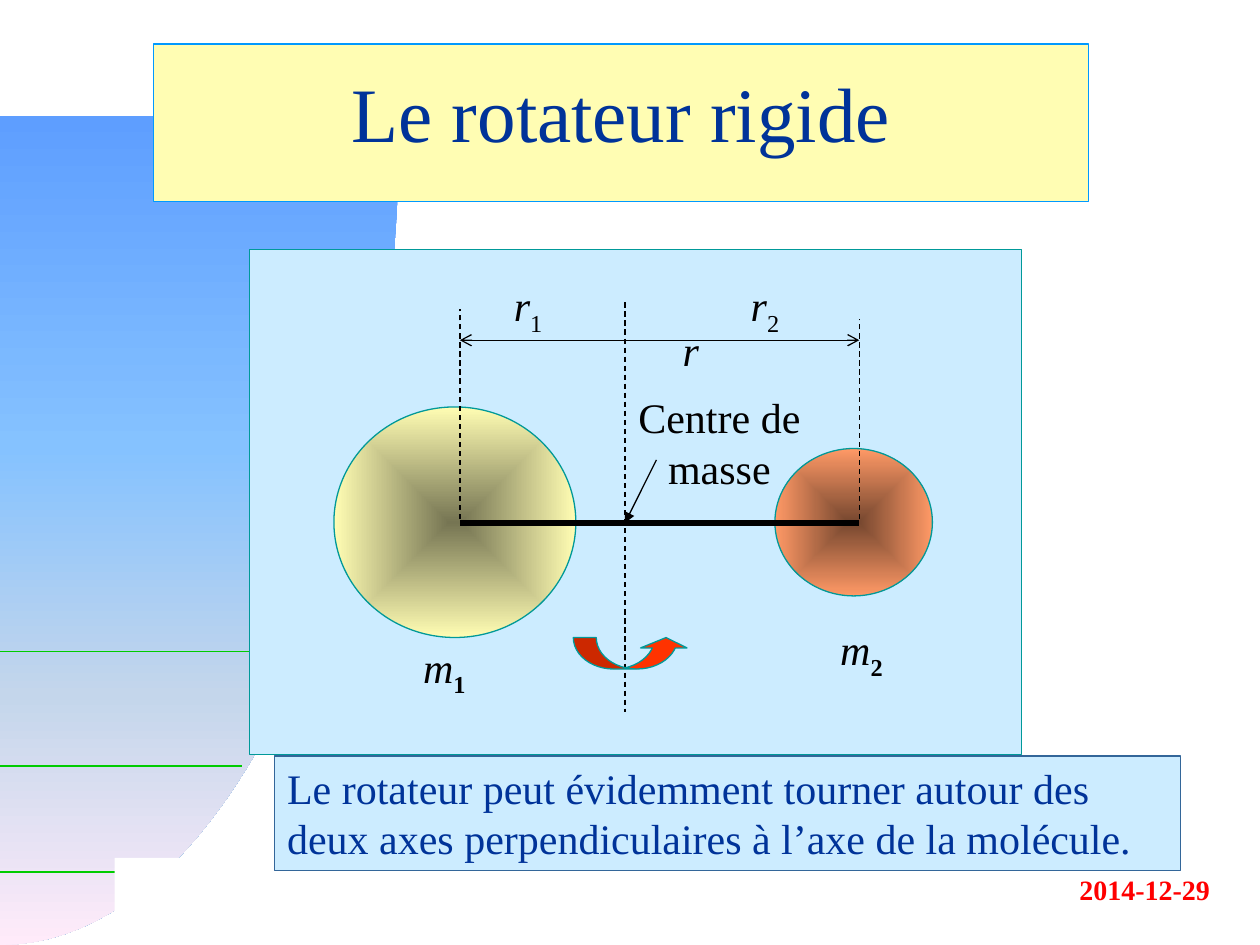
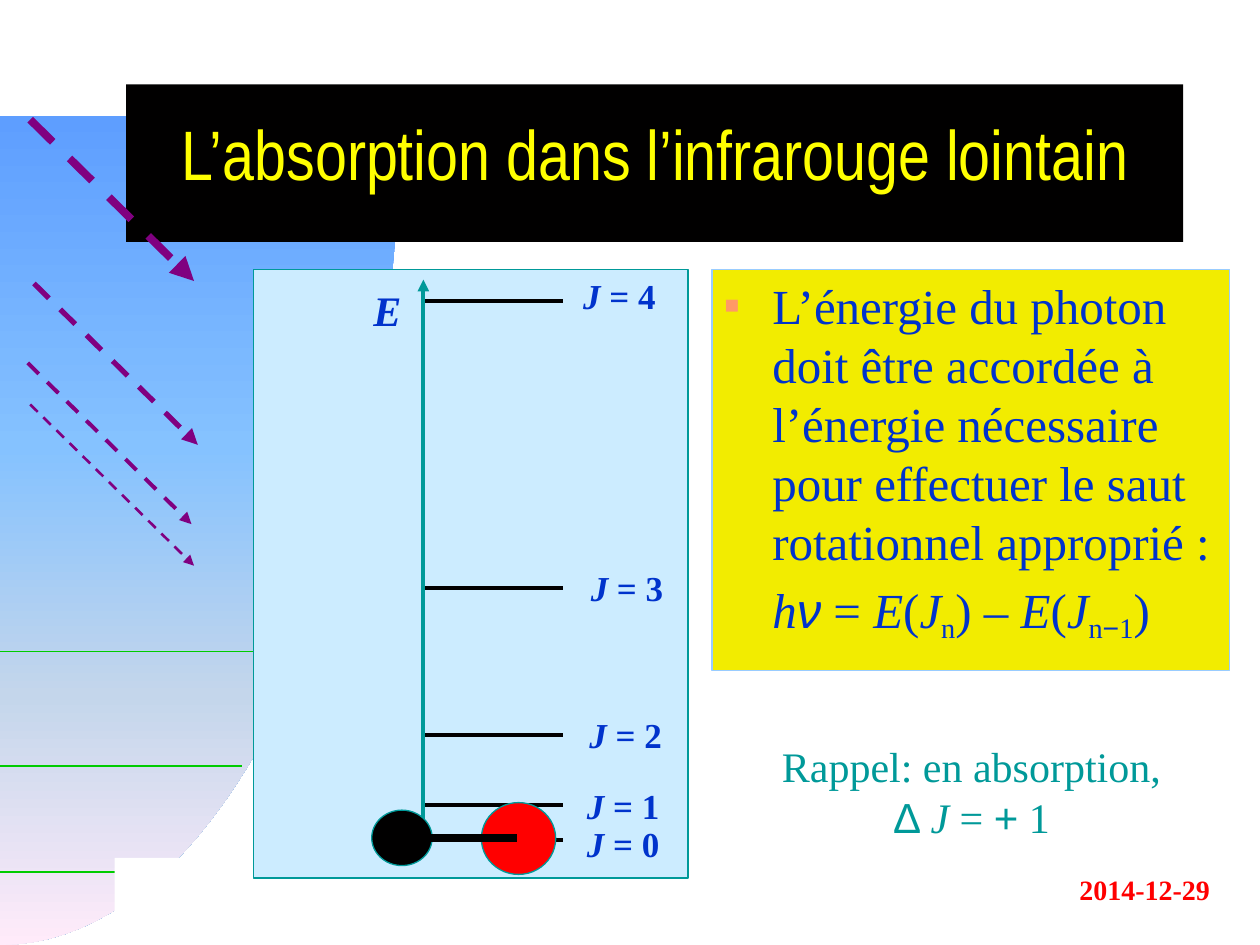
from dataclasses import dataclass
from typing import Optional

from lxml.etree import SubElement
from pptx import Presentation
from pptx.dml.color import RGBColor
from pptx.enum.dml import MSO_LINE
from pptx.enum.shapes import MSO_CONNECTOR, MSO_SHAPE
from pptx.enum.text import MSO_ANCHOR, MSO_AUTO_SIZE, PP_ALIGN
from pptx.oxml.ns import qn
from pptx.util import Inches, Pt

SERIF, SANS, NARROW = "Times New Roman", "Arial", "Arial Narrow"
BLACK, WHITE, RED, GREEN = "010000", "FFFFFF", "FF0000", "00CC00"
TEAL, PALE_BLUE, NAVY, BLUE = "009999", "CCECFF", "003399", "0033CC"
PURPLE, CREAM, YELLOW = "800080", "FFFDB3", "FFFF00"
SKY = [(0, "5E9EFF"), (40, "85C2FF"), (70, "C4D6EB"), (100, "FFEBFA")]
CURVE = [(0, 7.5), (1.75, 7.5), (3.17, 4.56), (3.17, 0.92)]
RULES = [(5.17, 2.42), (6.08, 1.92), (6.92, 1.33)]


@dataclass
class Run:
    """A stretch of text with one format."""
    text: str
    italic: bool = False
    bold: bool = False
    base: int = 0
    font: str = SERIF


@dataclass
class Line:
    """A straight line with optional dash and arrowheads."""
    x1: float
    y1: float
    x2: float
    y2: float
    color: str = BLACK
    width: float = 0.75
    dash: bool = False
    head: Optional[str] = None
    tail: Optional[str] = None


@dataclass
class Label:
    """A text box of one paragraph."""
    x: float
    y: float
    w: float
    h: float
    runs: list
    size: float = 24
    color: str = BLACK
    align: PP_ALIGN = PP_ALIGN.LEFT


@dataclass
class Level:
    """A rotational energy level and the place of its label."""
    j: int
    y: float
    label_x: float
    label_y: float


def rgb(color: str) -> RGBColor:
    """Turn a hex string into a colour."""
    return RGBColor.from_string(color)


def paint(sp, fill: Optional[str], line: Optional[str] = None) -> None:
    """Set the solid fill and thin outline of a shape."""
    if fill:
        sp.fill.solid()
        sp.fill.fore_color.rgb = rgb(fill)
    if line:
        sp.line.color.rgb = rgb(line)
        sp.line.width = Pt(0.75)
    else:
        sp.line.fill.background()


def gradient(sp, stops: list, radial: bool = False) -> None:
    """Fill a shape with a downward or a centred gradient."""
    sp.fill.gradient()
    grad = sp.element.spPr.find(qn("a:gradFill"))
    for child in list(grad):
        grad.remove(child)
    gs_list = SubElement(grad, qn("a:gsLst"))
    for pos, color in stops:
        gs = SubElement(gs_list, qn("a:gs"), pos=str(pos * 1000))
        SubElement(gs, qn("a:srgbClr"), val=color)
    if radial:
        center = SubElement(grad, qn("a:path"), path="shape")
        SubElement(center, qn("a:fillToRect"), {side: "50000" for side in "ltrb"})
    else:
        SubElement(grad, qn("a:lin"), ang="5400000", scaled="0")


def add_runs(p, runs: list, size: float, color: str) -> None:
    """Add formatted runs to a paragraph."""
    for run in runs:
        r = p.add_run()
        r.text = run.text
        r.font.name, r.font.size = run.font, Pt(size)
        r.font.italic, r.font.bold = run.italic, run.bold
        r.font.color.rgb = rgb(color)
        if run.base:
            r._r.get_or_add_rPr().set("baseline", str(run.base * 1000))


def add_label(slide, label: Label):
    """Draw a text box."""
    sp = slide.shapes.add_textbox(*map(Inches, (label.x, label.y, label.w, label.h)))
    sp.text_frame.word_wrap = True
    p = sp.text_frame.paragraphs[0]
    p.alignment = label.align
    add_runs(p, label.runs, label.size, label.color)
    return sp


def add_line(slide, line: Line) -> None:
    """Draw a line or an arrow."""
    ends = map(Inches, (line.x1, line.y1, line.x2, line.y2))
    cxn = slide.shapes.add_connector(MSO_CONNECTOR.STRAIGHT, *ends)
    cxn.line.color.rgb = rgb(line.color)
    cxn.line.width = Pt(line.width)
    if line.dash:
        cxn.line.dash_style = MSO_LINE.DASH
    ln = cxn.element.spPr.find(qn("a:ln"))
    for tag, kind in (("a:headEnd", line.head), ("a:tailEnd", line.tail)):
        if kind:
            SubElement(ln, qn(tag), type=kind)
    SubElement(cxn.element.spPr, qn("a:effectLst"))


def add_shape(slide, kind, box: tuple, fill: Optional[str], line: Optional[str] = None):
    """Draw a preset shape without shadow."""
    sp = slide.shapes.add_shape(kind, *map(Inches, box))
    sp.shadow.inherit = False
    paint(sp, fill, line)
    return sp


def place(sp, box: tuple) -> None:
    """Move and size a placeholder."""
    sp.left, sp.top, sp.width, sp.height = map(Inches, box)


def bezier(t: float) -> tuple:
    """Give the point of the backdrop curve at t."""
    weights = ((1 - t) ** 3, 3 * t * (1 - t) ** 2, 3 * t * t * (1 - t), t ** 3)
    return tuple(Inches(sum(w * pt[i] for w, pt in zip(weights, CURVE))) for i in (0, 1))


def add_backdrop(slide) -> None:
    """Draw the curved band, green rules, date and white patch."""
    points = [bezier(i / 40) for i in range(41)]
    builder = slide.shapes.build_freeform(*points[0])
    builder.add_line_segments(points[1:] + [(0, Inches(0.92))], close=True)
    band = builder.convert_to_shape()
    band.shadow.inherit = False
    paint(band, None)
    gradient(band, SKY)
    for y, end in RULES:
        add_line(slide, Line(0, y, end, y, GREEN))
    add_label(slide, Label(8.2, 6.88, 1.5, 0.37, [Run("2014-12-29", bold=True)],
                           16, RED, PP_ALIGN.RIGHT))
    add_shape(slide, MSO_SHAPE.RECTANGLE, (0.91, 6.81, 1.88, 0.47), WHITE)


def add_slide(prs, layout: int, title: Run, box: tuple, size: float, color: str,
              fill: str, line: Optional[str] = None):
    """Add a slide with the backdrop and a filled title."""
    slide = prs.slides.add_slide(prs.slide_layouts[layout])
    add_backdrop(slide)
    sp = slide.shapes.title
    slide.shapes.element.append(sp.element)
    place(sp, box)
    paint(sp, fill, line)
    tf = sp.text_frame
    tf.auto_size, tf.vertical_anchor = MSO_AUTO_SIZE.NONE, MSO_ANCHOR.MIDDLE
    p = tf.paragraphs[0]
    p.alignment, p.line_spacing = PP_ALIGN.CENTER, 0.7
    add_runs(p, [title], size, color)
    return slide


def symbol(letter: str, index: str = "", bold: bool = False) -> list:
    """Give the runs of an italic symbol with a subscript."""
    return [Run(letter, italic=True)] + ([Run(index, bold=bold, base=-25)] if index else [])


def build_rotor(prs) -> None:
    """Build the slide on the rigid rotor."""
    slide = add_slide(prs, 5, Run("Le rotateur rigide"), (1.22, 0.35, 7.42, 1.25),
                      44, NAVY, CREAM, "0099FF")
    x1, center, x2, axis_y = 3.65, 4.96, 6.82, 4.15
    add_shape(slide, MSO_SHAPE.RECTANGLE, (1.98, 1.98, 6.13, 4.01), PALE_BLUE, TEAL)
    add_line(slide, Line(center, 2.4, center, 5.65, dash=True))
    arrow = add_shape(slide, MSO_SHAPE.CURVED_UP_ARROW, (4.55, 5.06, 0.92, 0.25), "FF3300", TEAL)
    for i, value in enumerate((0.73, 1.47, 0.33)):
        arrow.adjustments[i] = value
    for box, dark, light in (((2.65, 3.23, 1.92, 1.83), "767553", CREAM),
                             ((6.15, 3.56, 1.25, 1.17), "76472F", "FF9966")):
        mass = add_shape(slide, MSO_SHAPE.OVAL, box, light, TEAL)
        gradient(mass, [(0, dark), (100, light)], radial=True)
    for line in (Line(5.21, 3.65, center, axis_y, tail="triangle"),
                 Line(x1, axis_y, x2, axis_y, width=3),
                 Line(x1, 2.7, x2, 2.7, head="arrow", tail="arrow"),
                 Line(x1, 4.12, x1, 2.45, dash=True),
                 Line(x2, 4.12, x2, 2.53, dash=True)):
        add_line(slide, line)
    for label in (Label(4.96, 3.06, 1.5, 0.9, [Run("Centre de masse")], align=PP_ALIGN.CENTER),
                  Label(3.98, 2.17, 0.75, 0.5, symbol("r", "1")),
                  Label(5.86, 2.17, 0.75, 0.5, symbol("r", "2")),
                  Label(5.32, 2.53, 0.5, 0.5, symbol("r")),
                  Label(3.26, 5.04, 0.56, 0.5, symbol("m", "1", True)),
                  Label(6.57, 4.9, 0.75, 0.5, symbol("m", "2", True))):
        add_label(slide, label)
    note = add_label(slide, Label(2.18, 6, 7.19, 0.91, [Run(
        "Le rotateur peut évidemment tourner autour des deux axes "
        "perpendiculaires à l’axe de la molécule.")], color=NAVY))
    paint(note, PALE_BLUE, "336699")


def add_photon_rule(slide) -> None:
    """Fill the body with the resonance condition."""
    body = slide.placeholders[1]
    slide.shapes.element.append(body.element)
    place(body, (5.65, 2.14, 4.11, 3.18))
    paint(body, "F2EC00", "99CCFF")
    tf = body.text_frame
    tf.auto_size = MSO_AUTO_SIZE.NONE
    p, formula = tf.paragraphs[0], tf.add_paragraph()
    for par, indent, before in ((p, -0.38, 0), (formula, 0, 5.6)):
        pPr = par._p.get_or_add_pPr()
        pPr.set("marL", str(Inches(0.38)))
        pPr.set("indent", str(Inches(indent)))
        par.space_before = Pt(before)
    pPr = p._p.get_or_add_pPr()
    SubElement(SubElement(pPr, qn("a:buClr")), qn("a:srgbClr"), val="FF9966")
    SubElement(pPr, qn("a:buSzPct"), val="50000")
    SubElement(pPr, qn("a:buFont"), typeface=SANS)
    SubElement(pPr, qn("a:buChar"), char="■")
    SubElement(formula._p.get_or_add_pPr(), qn("a:buNone"))
    add_runs(p, [Run("L’énergie du photon doit être accordée à l’énergie nécessaire "
                     "pour effectuer le saut rotationnel approprié :")], 28, BLUE)
    energy = [Run("E", italic=True), Run("("), Run("J", italic=True), Run("n", base=-20)]
    add_runs(formula, [Run("h", italic=True), Run("ν", italic=True, font=SANS), Run(" = "),
                       *energy, Run(") – "), *energy, Run("−", base=-20, font=SANS),
                       Run("1", base=-20), Run(")")], 28, BLUE)


def build_absorption(prs) -> None:
    """Build the slide on far infrared absorption."""
    slide = add_slide(prs, 1, Run("L’absorption dans l’infrarouge lointain", font=NARROW),
                      (1, 0.67, 8.39, 1.25), 40, YELLOW, BLACK)
    add_shape(slide, MSO_SHAPE.RECTANGLE, (2.01, 2.14, 3.45, 4.83), PALE_BLUE, TEAL)
    for level in (Level(0, 6.67, 4.56, 6.48), Level(1, 6.39, 4.56, 6.18),
                  Level(2, 5.83, 4.58, 5.61), Level(3, 4.67, 4.59, 4.45),
                  Level(4, 2.39, 4.53, 2.13)):
        add_line(slide, Line(3.36, level.y, 4.47, level.y, width=2.25))
        add_label(slide, Label(level.label_x, level.label_y, 0.78, 0.43,
                               [Run("J", True, True), Run(f" = {level.j}", bold=True)], 20, BLUE))
    add_line(slide, Line(3.36, 2.22, 3.36, 6.66, TEAL, 2.25, head="triangle"))
    add_label(slide, Label(2.82, 2.21, 0.51, 0.5, [Run("E", True, True)], 24, BLUE,
                           PP_ALIGN.CENTER))
    add_shape(slide, MSO_SHAPE.OVAL, (2.95, 6.43, 0.48, 0.44), BLACK, TEAL)
    add_shape(slide, MSO_SHAPE.OVAL, (3.82, 6.37, 0.59, 0.57), RED, TEAL)
    add_line(slide, Line(3.19, 6.65, 4.1, 6.65, width=4.5))
    for x, y, width in ((0.24, 3.21, 1.5), (0.22, 2.88, 2.25), (0.27, 2.25, 3), (0.24, 0.95, 4.5)):
        add_line(slide, Line(x, y, x + 1.3, y + 1.28, PURPLE, width, True, tail="triangle"))
    add_photon_rule(slide)
    add_label(slide, Label(6.1, 5.83, 3.22, 0.91, [
        Run("Rappel: en absorption, "), Run("Δ ", font=SANS), Run("J", italic=True),
        Run(" = "), Run("+", font=SANS), Run(" 1")], 24, TEAL, PP_ALIGN.CENTER))


def main() -> None:
    """Build and save the presentation."""
    prs = Presentation()
    prs.slide_width, prs.slide_height = Inches(10), Inches(7.5)
    build_rotor(prs)
    build_absorption(prs)
    prs.save("out.pptx")


if __name__ == "__main__":
    main()
